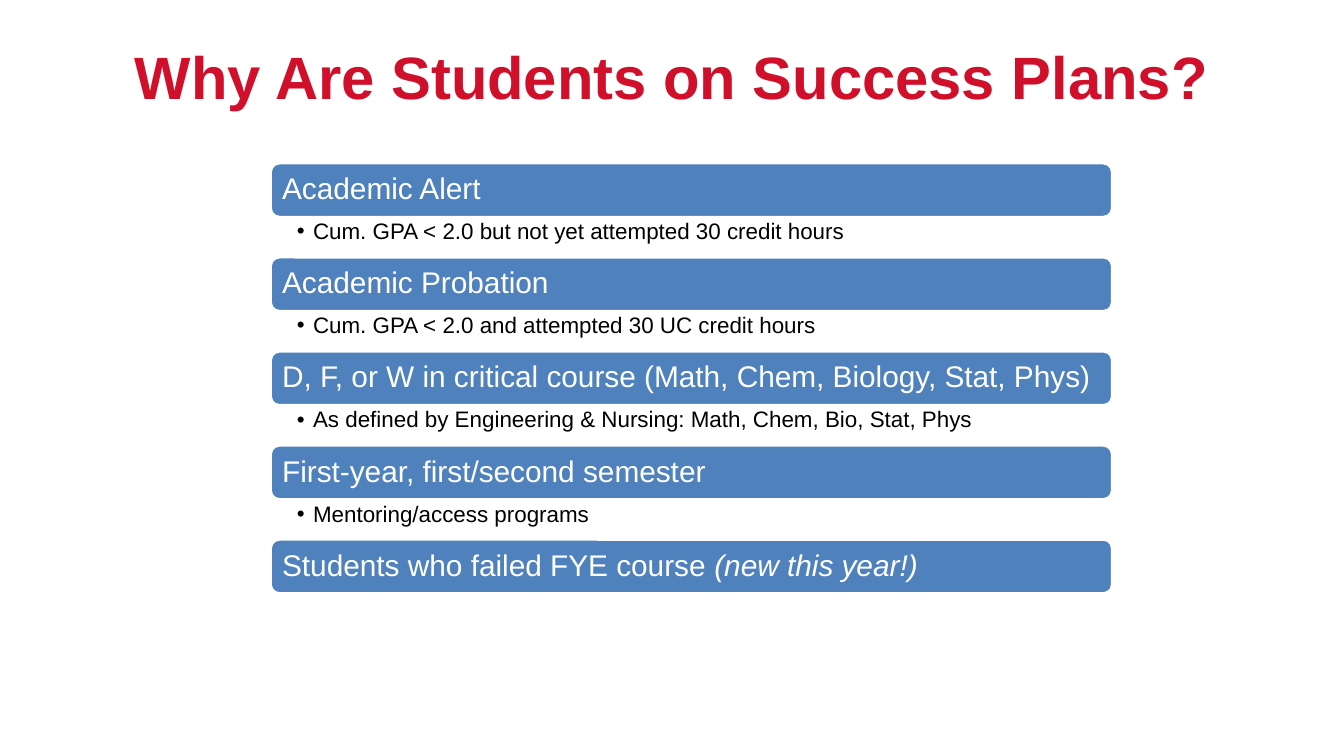
from lxml import etree
from pptx import Presentation
from pptx.dml.color import RGBColor
from pptx.enum import shapes, text
from pptx.oxml import ns
from pptx.util import Inches, Pt


def style(font, size, color):
    font.name = "Arial"
    font.size = Pt(size)
    font.color.rgb = RGBColor.from_string(color)


def set_insets(tf, left, top, right, bottom):
    tf.margin_left, tf.margin_top = Inches(left), Inches(top)
    tf.margin_right, tf.margin_bottom = Inches(right), Inches(bottom)
    tf.word_wrap = True


# Widescreen 16:9 slide
prs = Presentation()
prs.slide_width, prs.slide_height = Inches(10), Inches(10 * 9 / 16)
s = prs.slides.add_slide(prs.slide_layouts[5])

# Title
title = s.shapes.title
title.left, title.top = Inches(0.5), Inches(0.34)
title.width, title.height = Inches(9), Inches(0.45)
tf = title.text_frame
tf.text = "Why Are Students on Success Plans?"
tf.auto_size = text.MSO_AUTO_SIZE.NONE
tf.vertical_anchor = text.MSO_ANCHOR.MIDDLE
p = tf.paragraphs[0]
p.alignment = text.PP_ALIGN.CENTER
r = p.runs[0]
style(r.font, 32, "D00F2A")
r.font.bold = True

# Reasons: heading, italic ending, detail
reasons = [
    ("Academic Alert ", "", "Cum. GPA < 2.0 but not yet attempted 30 credit hours"),
    ("Academic Probation", "", "Cum. GPA < 2.0 and attempted 30 UC credit hours"),
    ("D, F, or W in critical course (Math, Chem, Biology, Stat, Phys)", "",
     "As defined by Engineering & Nursing: Math, Chem, Bio, Stat, Phys"),
    ("First-year, first/second semester", "", "Mentoring/access programs"),
    ("Students who failed FYE course ", "(new this year!)", ""),
]
left, top, width, bar_height, detail_height = 2.01, 1.21, 6.27, 0.41, 0.29

for i, (heading, ending, detail) in enumerate(reasons):
    y = top + i * (bar_height + detail_height)

    # Heading bar
    sp = s.shapes.add_shape(shapes.MSO_SHAPE.ROUNDED_RECTANGLE, Inches(left), Inches(y),
                            Inches(width), Inches(bar_height))
    sp.shadow.inherit = False
    sp.fill.solid()
    sp.fill.fore_color.rgb = RGBColor.from_string("4F81BD")
    sp.line.color.rgb = RGBColor.from_string("FFFFFF")
    sp.line.width = Pt(2)
    tf = sp.text_frame
    set_insets(tf, 0.07, 0.07, 0.07, 0.07)
    tf.vertical_anchor = text.MSO_ANCHOR.MIDDLE
    p = tf.paragraphs[0]
    p.text = heading
    p.alignment = text.PP_ALIGN.LEFT
    p.line_spacing = 0.9
    if ending:
        r = p.add_run()
        r.text = ending
        r.font.italic = True
    for r in p.runs:
        style(r.font, 16, "FFFFFF")

    # Bulleted detail
    if detail:
        box = s.shapes.add_textbox(Inches(left), Inches(y + bar_height),
                                   Inches(width), Inches(detail_height))
        tf = box.text_frame
        set_insets(tf, 0.2, 0.02, 0.12, 0.02)
        p = tf.paragraphs[0]
        p.text = detail
        p.level = 1
        p.line_spacing = 0.9
        pPr = p._p.get_or_add_pPr()
        pPr.set("marL", str(Inches(0.12)))
        pPr.set("indent", str(Inches(-0.12)))
        etree.SubElement(pPr, ns.qn("a:buFont"), typeface="Arial")
        etree.SubElement(pPr, ns.qn("a:buChar"), char="•")
        style(p.runs[0].font, 12, "000000")

prs.save("out.pptx")
